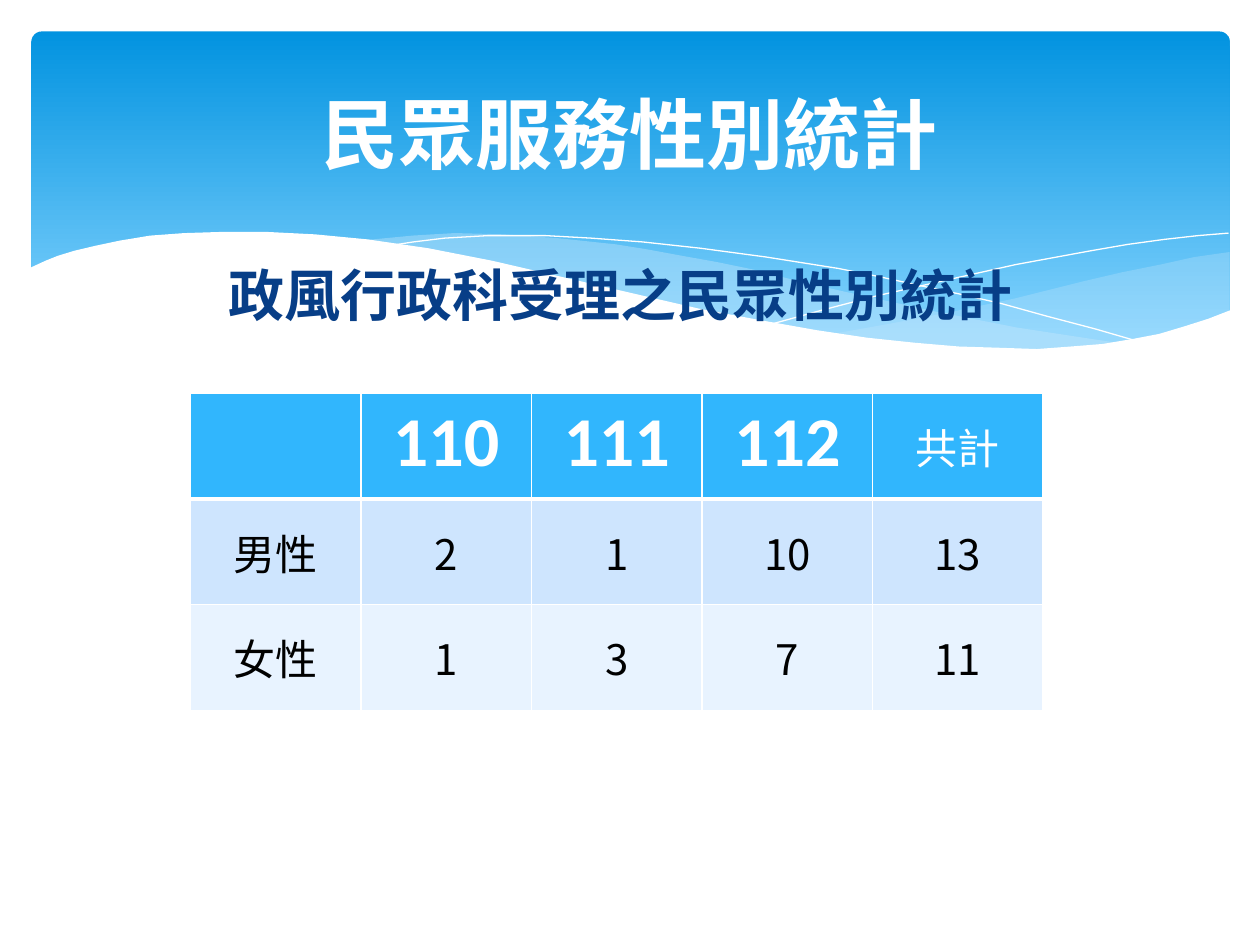
from lxml import etree
from pptx import Presentation
from pptx.dml.color import RGBColor
from pptx.enum.shapes import MSO_SHAPE as SHAPE
from pptx.enum.text import MSO_ANCHOR as ANCHOR, PP_ALIGN as ALIGN
from pptx.oxml.ns import qn
from pptx.util import Inches, Pt

WHITE = RGBColor(0xFF, 0xFF, 0xFF)
BLACK = RGBColor(0x00, 0x00, 0x00)
NAVY = RGBColor(0x07, 0x3E, 0x87)
SKY_TOP = RGBColor(0x02, 0x93, 0xE0)
SKY_BOTTOM = RGBColor(0x83, 0xD3, 0xFE)
MIST = RGBColor(0xC6, 0xE7, 0xFC)
HEADER = RGBColor(0x31, 0xB6, 0xFD)
BANDS = [RGBColor(0xCE, 0xE5, 0xFE), RGBColor(0xE8, 0xF3, 0xFF)]
SC_FONT, TC_FONT = "Noto Sans CJK SC", "Noto Sans CJK TC"

# Wave outlines, in inches
RIGHT_WAVE = [
    (9.76, 2), (9.48, 2.04), (9.21, 2.1), (8.91, 2.16), (8.61, 2.23), (8.05, 2.37),
    (7.53, 2.48), (7.06, 2.57), (6.61, 2.65), (6.91, 2.69), (7.19, 2.72), (7.45, 2.75),
    (7.69, 2.77), (8.03, 2.78), (8.35, 2.77), (8.63, 2.75), (8.89, 2.72), (9.13, 2.67),
    (9.35, 2.62), (9.49, 2.57), (9.63, 2.52), (9.76, 2.47)]
LEFT_WAVE = [
    (8.93, 2.73), (8.66, 2.69), (8.07, 2.6), (7.41, 2.47), (6.68, 2.31), (6.29, 2.22),
    (5.98, 2.14), (5.69, 2.08), (5.41, 2.03), (5.14, 1.98), (4.89, 1.94), (4.42, 1.89),
    (3.99, 1.86), (3.61, 1.85), (3.28, 1.87), (2.86, 1.91), (3.23, 1.96), (3.62, 2.03),
    (4.04, 2.11), (4.49, 2.22), (4.91, 2.32), (5.3, 2.4), (5.66, 2.48), (6.01, 2.55),
    (6.34, 2.61), (6.65, 2.66), (6.95, 2.7), (7.22, 2.74), (7.48, 2.76), (7.85, 2.78),
    (8.28, 2.78), (8.57, 2.77), (8.76, 2.75)]
FALLING_LINE = [
    (3.09, 1.95), (3.28, 1.92), (3.53, 1.89), (3.87, 1.87), (4.33, 1.87), (4.69, 1.89),
    (5.1, 1.92), (5.56, 1.97), (6.08, 2.04), (6.65, 2.13), (6.95, 2.19), (7.27, 2.26),
    (7.6, 2.33), (7.95, 2.41), (8.31, 2.51), (8.69, 2.61), (9.07, 2.72)]
RISING_LINE = [
    (6.13, 2.57), (6.53, 2.46), (6.95, 2.35), (7.48, 2.23), (8.06, 2.1), (8.66, 1.99),
    (8.95, 1.94), (9.24, 1.9), (9.51, 1.87), (9.75, 1.85)]
WHITE_WAVE = [
    (9.77, 2.46), (9.59, 2.53), (9.4, 2.59), (9.2, 2.65), (8.99, 2.69), (8.75, 2.73),
    (8.5, 2.75), (8.23, 2.77), (7.93, 2.76), (7.61, 2.75), (7.26, 2.72), (6.88, 2.68),
    (6.48, 2.62), (6.03, 2.54), (5.55, 2.45), (5.03, 2.33), (4.47, 2.2), (3.91, 2.07),
    (3.4, 1.97), (2.92, 1.9), (2.5, 1.86), (2.11, 1.84), (1.77, 1.84), (1.46, 1.85),
    (1.19, 1.87), (0.95, 1.91), (0.76, 1.95), (0.59, 1.99), (0.46, 2.03), (0.36, 2.07),
    (0.23, 2.13), (0.23, 3.29), (9.77, 3.29)]


class SlideBuilder:
    TITLE = {"size": Pt(44), "name": SC_FONT, "bold": True}
    SUBTITLE = {"size": Pt(32), "name": SC_FONT, "bold": True}
    YEAR = {"size": Pt(40), "name": "Calibri", "bold": True}
    CELL = {"size": Pt(24), "name": TC_FONT, "bold": False}

    def __init__(self, slide):
        self.s = slide

    def add_words(self, tf, text, style, color):
        p = tf.paragraphs[0]
        p.alignment = ALIGN.CENTER
        r = p.add_run()
        r.text = text
        for key, value in style.items():
            setattr(r.font, key, value)
        r.font.color.rgb = color
        ea = etree.SubElement(r.font._element, qn("a:ea"))
        ea.set("typeface", style["name"])

    def text(self, box, text, style, color, anchor=ANCHOR.TOP):
        tf = self.s.shapes.add_textbox(*map(Inches, box)).text_frame
        tf.word_wrap = True
        tf.vertical_anchor = anchor
        self.add_words(tf, text, style, color)

    def banner(self, box):
        sp = self.s.shapes.add_shape(SHAPE.ROUNDED_RECTANGLE, *map(Inches, box))
        sp.adjustments[0] = 0.03
        sp.shadow.inherit = False
        sp.line.fill.background()
        sp.fill.gradient()
        sp.fill.gradient_angle = 270
        stops = [(0, SKY_TOP), (0.9, SKY_BOTTOM)]
        for stop, (position, color) in zip(sp.fill.gradient_stops, stops):
            stop.position = position
            stop.color.rgb = color

    def outline(self, points, close):
        start, *rest = [(Inches(x), Inches(y)) for x, y in points]
        builder = self.s.shapes.build_freeform(*start)
        builder.add_line_segments(rest, close=close)
        sp = builder.convert_to_shape()
        sp.shadow.inherit = False
        return sp

    def wave(self, points, color, opacity=100):
        sp = self.outline(points, True)
        sp.line.fill.background()
        sp.fill.solid()
        sp.fill.fore_color.rgb = color
        if opacity < 100:
            clr = sp._element.spPr.find(qn("a:solidFill")).find(qn("a:srgbClr"))
            etree.SubElement(clr, qn("a:alpha")).set("val", str(opacity * 1000))

    def curve(self, points):
        sp = self.outline(points, False)
        sp.fill.background()
        sp.line.color.rgb = WHITE
        sp.line.width = Pt(0)

    def borders(self, cell, widths):
        tcPr = cell._tc.get_or_add_tcPr()
        for side, width in widths.items():
            ln = etree.SubElement(tcPr, qn(f"a:ln{side}"), w=str(Pt(width)))
            fill = etree.SubElement(ln, qn("a:solidFill"))
            etree.SubElement(fill, qn("a:srgbClr"), val=str(WHITE))

    def table(self, box, rows):
        shape = self.s.shapes.add_table(len(rows), len(rows[0]), *map(Inches, box))
        for i, row in enumerate(rows):
            for j, text in enumerate(row):
                cell = shape.table.cell(i, j)
                self.borders(cell, {"L": 1, "R": 1, "T": 3 if i == 1 else 1,
                                    "B": 3 if i == 0 else 1})
                cell.fill.solid()
                cell.fill.fore_color.rgb = BANDS[i - 1] if i else HEADER
                if not text:
                    continue
                is_year = i == 0 and text.isdigit()
                cell.vertical_anchor = ANCHOR.TOP if is_year else ANCHOR.MIDDLE
                self.add_words(cell.text_frame, text, self.YEAR if is_year else self.CELL,
                               BLACK if i else WHITE)


def main():
    prs = Presentation()
    prs.slide_width, prs.slide_height = Inches(10), Inches(7.5)
    b = SlideBuilder(prs.slides.add_slide(prs.slide_layouts[6]))

    # Banner and waves
    b.banner((0.25, 0.25, 9.51, 2.7))
    b.wave(RIGHT_WAVE, MIST, 29)
    b.wave(LEFT_WAVE, MIST, 40)
    b.curve(FALLING_LINE)
    b.curve(RISING_LINE)
    b.wave(WHITE_WAVE, WHITE)

    # Headings
    b.text((0.5, 0.37, 9, 1.37), "民眾服務性別統計", b.TITLE, WHITE, ANCHOR.MIDDLE)
    b.text((0.99, 2.02, 7.87, 0.64), "政風行政科受理之民眾性別統計", b.SUBTITLE, NAVY)

    # Visitors by gender and year
    b.table((1.51, 3.12, 6.77, 2.52), [
        ["", "110", "111", "112", "共計"],
        ["男性", "2", "1", "10", "13"],
        ["女性", "1", "3", "7", "11"],
    ])
    prs.save("out.pptx")


if __name__ == "__main__":
    main()
